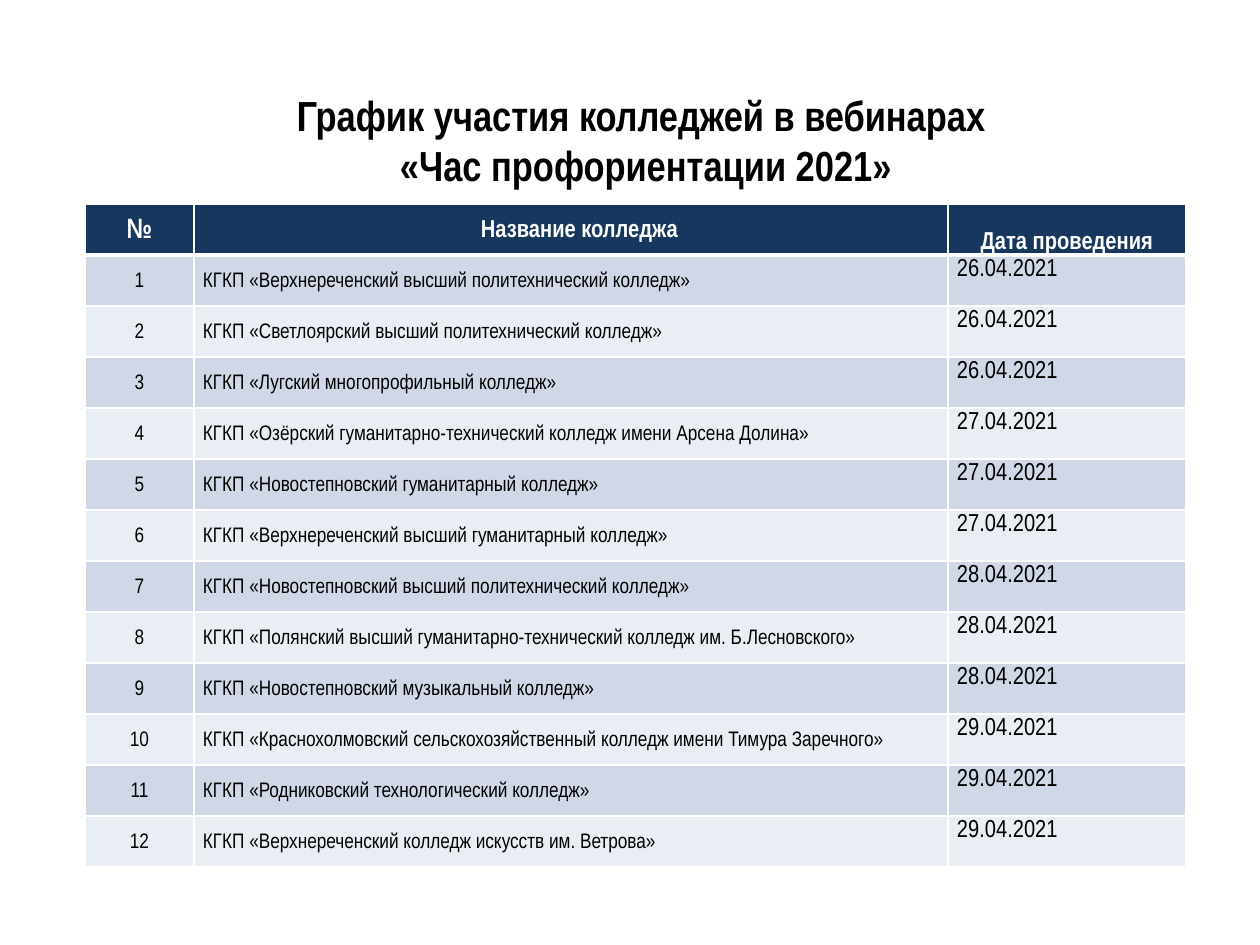
from lxml.etree import SubElement
from pptx import Presentation
from pptx.dml.color import RGBColor
from pptx.enum.text import MSO_ANCHOR as Anchor, PP_ALIGN as Align
from pptx.oxml.ns import qn
from pptx.util import Pt

PX = 914400 // 126  # EMU per pixel
FONT = "Arial Narrow"
COLORS = {"header": "17375E", "odd": "D0D8E8", "even": "E9EDF4",
          "white": "FFFFFF", "black": "000000"}

COLLEGES = [
    "Верхнереченский высший политехнический колледж",
    "Светлоярский высший политехнический колледж",
    "Лугский многопрофильный колледж",
    "Озёрский гуманитарно-технический колледж имени Арсена Долина",
    "Новостепновский гуманитарный колледж",
    "Верхнереченский высший гуманитарный колледж",
    "Новостепновский высший политехнический колледж",
    "Полянский высший гуманитарно-технический колледж им. Б.Лесновского",
    "Новостепновский музыкальный колледж",
    "Краснохолмовский сельскохозяйственный колледж имени Тимура Заречного",
    "Родниковский технологический колледж",
    "Верхнереченский колледж искусств им. Ветрова",
]
COLUMN_WIDTHS = [109, 754, 238]
ROW_HEIGHT = 51
FIRST_DAY = 26
COLLEGES_PER_DAY = 3


def style_paragraph(paragraph, size, color, bold, align):
    paragraph.alignment = align
    paragraph.font.name = FONT
    paragraph.font.size = Pt(size)
    paragraph.font.bold = bold
    paragraph.font.color.rgb = RGBColor.from_string(COLORS[color])


def fill_cell(cell, text, fill, size, color, bold, align, anchor):
    cell.text = text
    cell.fill.solid()
    cell.fill.fore_color.rgb = RGBColor.from_string(COLORS[fill])
    cell.vertical_anchor = anchor
    cell.margin_left = cell.margin_right = 9 * PX
    cell.margin_top = cell.margin_bottom = 0
    paragraph = cell.text_frame.paragraphs[0]
    paragraph.line_spacing = 1.15
    style_paragraph(paragraph, size, color, bold, align)


presentation = Presentation()
presentation.slide_width = 1260 * PX
presentation.slide_height = 945 * PX
slide = presentation.slides.add_slide(presentation.slide_layouts[5])

# Title
title = slide.shapes.title
title.left, title.top, title.width, title.height = (
    74 * PX, 66 * PX, 1134 * PX, 147 * PX)
title.text_frame.text = "График участия колледжей в вебинарах\v «Час профориентации 2021»"
title.text_frame.vertical_anchor = Anchor.MIDDLE
style_paragraph(title.text_frame.paragraphs[0], 24, "black", True, Align.CENTER)

# Table grid
row_count = len(COLLEGES) + 1
table = slide.shapes.add_table(
    row_count, len(COLUMN_WIDTHS), 85 * PX, 204 * PX,
    sum(COLUMN_WIDTHS) * PX, row_count * ROW_HEIGHT * PX).table
for column, width in zip(table.columns, COLUMN_WIDTHS):
    column.width = width * PX
for row in table.rows:
    row.height = ROW_HEIGHT * PX

# Header row with a thick white rule below
headers = [("№", 16, Anchor.MIDDLE),
           ("Название колледжа", 14, Anchor.MIDDLE),
           ("Дата проведения", 14, Anchor.BOTTOM)]
for cell, (text, size, anchor) in zip(table.rows[0].cells, headers):
    fill_cell(cell, text, "header", size, "white", True, Align.CENTER, anchor)
    properties = cell._tc.get_or_add_tcPr()
    rule = SubElement(properties, qn("a:lnB"), w=str(Pt(3)))
    SubElement(SubElement(rule, qn("a:solidFill")), qn("a:srgbClr"), val=COLORS["white"])
    properties.insert(0, rule)  # borders come before the fill
table.cell(0, 1).margin_left = 26 * PX  # heading sits right of centre

# College rows, three colleges a day
for number, college in enumerate(COLLEGES, start=1):
    fill = "odd" if number % 2 else "even"
    day = FIRST_DAY + (number - 1) // COLLEGES_PER_DAY
    values = [(str(number), 12, Align.CENTER, Anchor.MIDDLE),
              (f"КГКП «{college}»", 12, Align.LEFT, Anchor.MIDDLE),
              (f"{day}.04.2021", 14, Align.LEFT, Anchor.TOP)]
    for cell, (text, size, align, anchor) in zip(table.rows[number].cells, values):
        fill_cell(cell, text, fill, size, "black", False, align, anchor)
    table.cell(number, 2).text_frame.paragraphs[0].space_after = Pt(10)

presentation.save("out.pptx")
